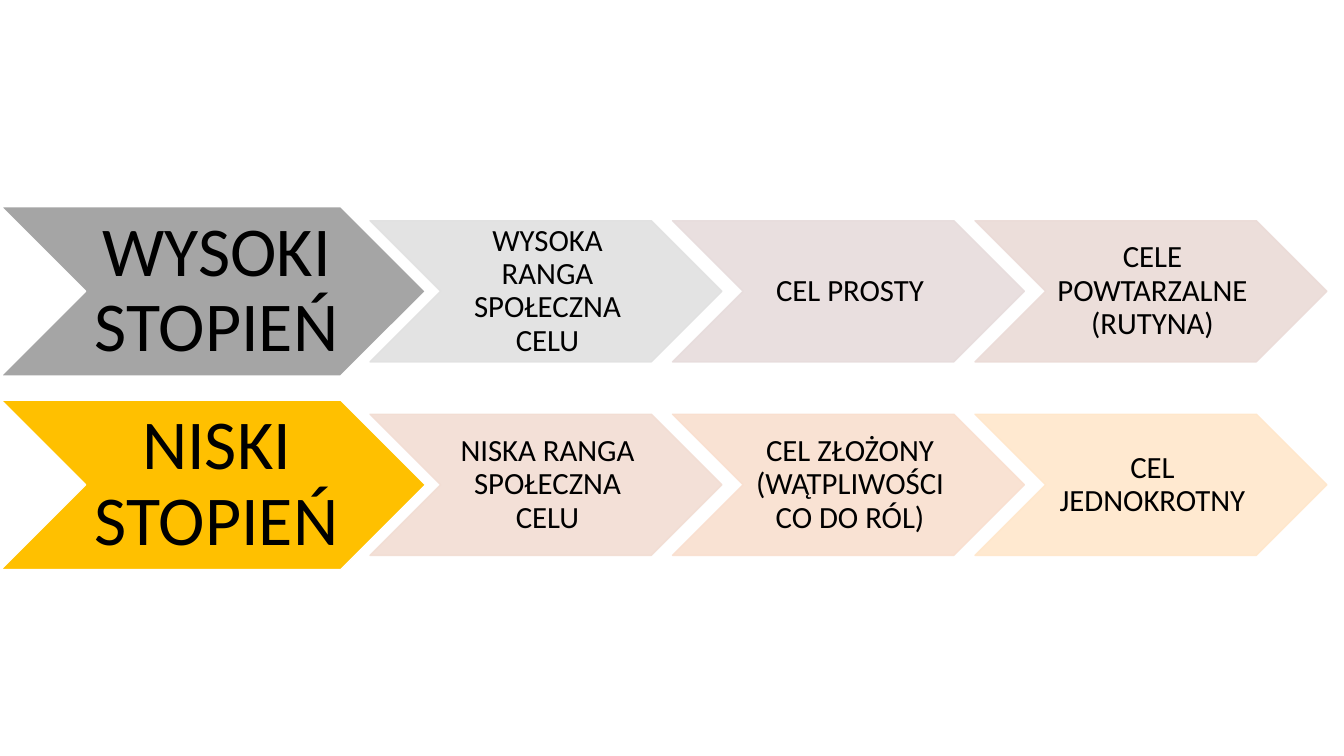
from dataclasses import dataclass

from pptx import Presentation
from pptx.dml.color import RGBColor
from pptx.enum.shapes import MSO_SHAPE
from pptx.enum.text import MSO_ANCHOR, PP_ALIGN
from pptx.oxml.ns import qn
from pptx.oxml.xmlchemy import OxmlElement
from pptx.util import Inches, Pt

CHEVRON = MSO_SHAPE.CHEVRON
MIDDLE = MSO_ANCHOR.MIDDLE
CENTER = PP_ALIGN.CENTER

COLORS = {
    "text": "000000",
    "white": "FFFFFF",
    "gray": "A5A5A5",
    "gold": "FFC000",
    "pale_gray": "E1E1E1",
    "pale_mauve": "E7DCDC",
    "pale_rose": "EBDBD7",
    "pale_clay": "F2DDD3",
    "pale_peach": "F9DFCF",
    "pale_gold": "FFE7CB",
}

# Layout in inches
ROW_TOP, ROW_STEP = 2.05, 1.92
HEAD_LEFT, HEAD_W, HEAD_H = 0.01, 4.21, 1.68
GOAL_LEFT, GOAL_STEP, GOAL_W, GOAL_H = 3.67, 3.0, 3.49, 1.4


@dataclass
class Step:
    text: str
    color: str


@dataclass
class Row:
    head: Step
    goals: list[Step]


ROWS = [
    Row(Step("WYSOKI STOPIEŃ", "gray"), [
        Step("WYSOKA RANGA SPOŁECZNA CELU", "pale_gray"),
        Step("CEL PROSTY", "pale_mauve"),
        Step("CELE POWTARZALNE (RUTYNA)", "pale_rose"),
    ]),
    Row(Step("NISKI STOPIEŃ", "gold"), [
        Step("NISKA RANGA SPOŁECZNA CELU", "pale_clay"),
        Step("CEL ZŁOŻONY (WĄTPLIWOŚCI CO DO RÓL)", "pale_peach"),
        Step("CEL JEDNOKROTNY", "pale_gold"),
    ]),
]


def rgb(name: str) -> RGBColor:
    return RGBColor.from_string(COLORS[name])


def set_opacity(sp, percent: int) -> None:
    for clr in sp._element.spPr.iter(qn("a:srgbClr")):
        alpha = OxmlElement("a:alpha")
        alpha.set("val", str(percent * 1000))
        clr.append(alpha)


def write_text(sp, text: str, *, size: float, left: float, margin: float,
               color: str = "text", font: str = "Calibri") -> None:
    tf = sp.text_frame
    tf.word_wrap = True
    tf.vertical_anchor = MIDDLE
    tf.margin_left, tf.margin_right = Inches(left), 0
    tf.margin_top = tf.margin_bottom = Inches(margin)
    p = tf.paragraphs[0]
    p.alignment = CENTER
    p.line_spacing = 0.9
    r = p.add_run()
    r.text = text
    r.font.size = Pt(size)
    r.font.name = font
    r.font.color.rgb = rgb(color)


def add_chevron(s, step: Step, x: float, y: float, w: float, h: float, line: str):
    sp = s.shapes.add_shape(CHEVRON, Inches(x), Inches(y), Inches(w), Inches(h))
    sp.shadow.inherit = False
    sp.fill.solid()
    sp.fill.fore_color.rgb = rgb(step.color)
    sp.line.color.rgb = rgb(line)
    sp.line.width = Pt(1)
    return sp


def add_row(s, row: Row, top: float) -> None:
    # Degree heading
    sp = add_chevron(s, row.head, HEAD_LEFT, top, HEAD_W, HEAD_H, "white")
    write_text(sp, row.head.text, size=50, left=0.07, margin=0.03)

    # Goals, centred on the heading's height
    goal_top = top + (HEAD_H - GOAL_H) / 2
    for i, goal in enumerate(row.goals):
        sp = add_chevron(s, goal, GOAL_LEFT + i * GOAL_STEP, goal_top,
                         GOAL_W, GOAL_H, goal.color)
        set_opacity(sp, 90)
        write_text(sp, goal.text, size=22, left=0.03, margin=0.02)


def main() -> None:
    prs = Presentation()
    prs.slide_width, prs.slide_height = Inches(13.33), Inches(7.5)
    s = prs.slides.add_slide(prs.slide_layouts[6])
    for i, row in enumerate(ROWS):
        add_row(s, row, ROW_TOP + i * ROW_STEP)
    prs.save("out.pptx")


if __name__ == "__main__":
    main()
